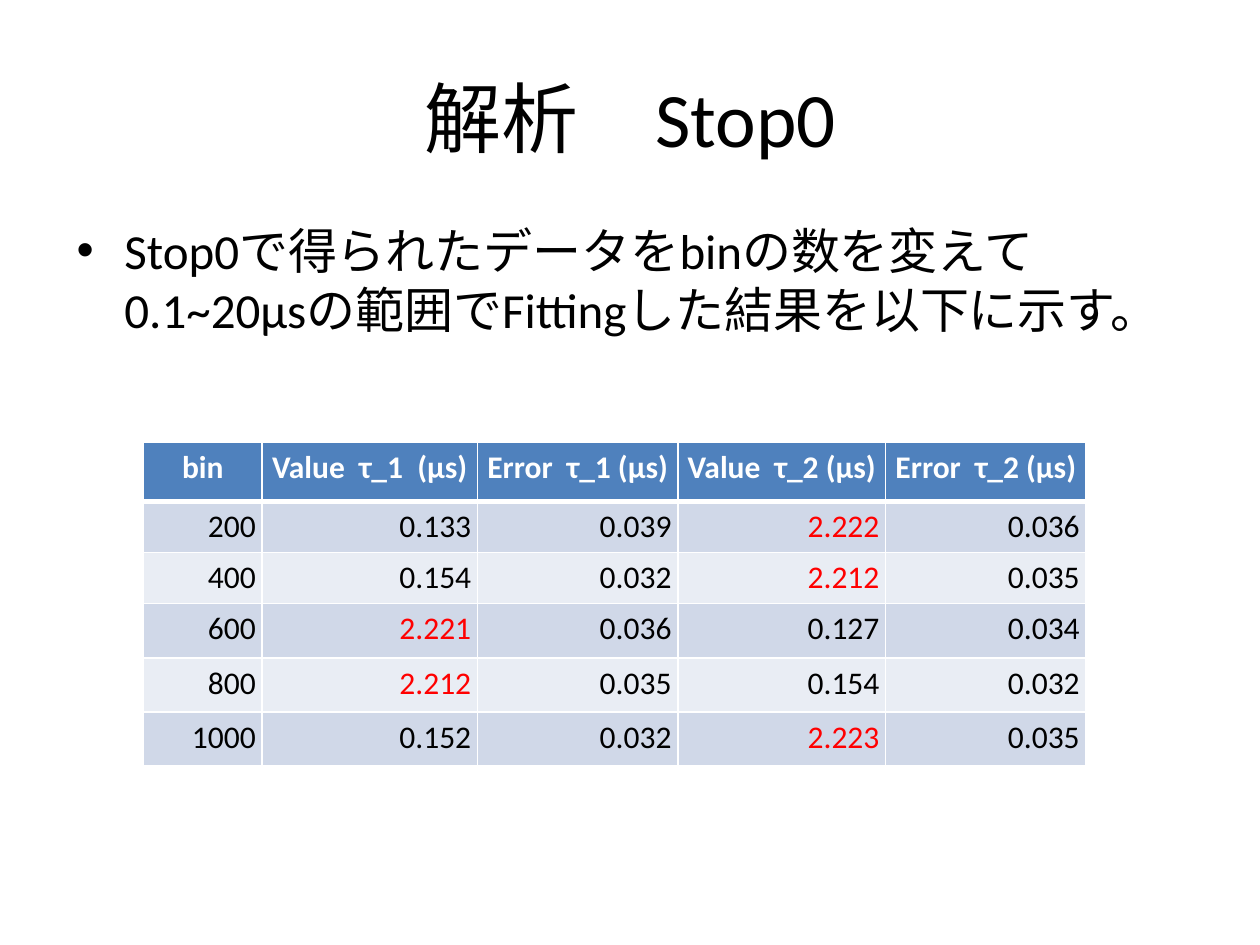
from lxml import etree
from pptx import Presentation
from pptx.dml.color import RGBColor
from pptx.enum.text import MSO_ANCHOR, PP_ALIGN
from pptx.oxml.ns import qn
from pptx.util import Inches, Pt

LEFT, CENTER, RIGHT = PP_ALIGN.LEFT, PP_ALIGN.CENTER, PP_ALIGN.RIGHT
TOP, MIDDLE = MSO_ANCHOR.TOP, MSO_ANCHOR.MIDDLE
TITLE_ONLY = 5
FONT = "Calibri"
BLACK, WHITE, RED = "000000", "FFFFFF", "FF0000"
HEADER_FILL = "4F81BD"
BAND_FILLS = ("D0D8E8", "E9EDF4")

COL_WIDTHS = (0.94, 1.71, 1.59, 1.65, 1.59)
ROW_HEIGHTS = (0.47, 0.4, 0.4, 0.43, 0.43, 0.43)
HEADERS = ("bin", "Value  τ_1  (μs)", "Error  τ_1 (μs)",
           "Value  τ_2 (μs)", "Error  τ_2 (μs)")
FITS = (
    (200, 0.133, 0.039, 2.222, 0.036),
    (400, 0.154, 0.032, 2.212, 0.035),
    (600, 2.221, 0.036, 0.127, 0.034),
    (800, 2.212, 0.035, 0.154, 0.032),
    (1000, 0.152, 0.032, 2.223, 0.035),
)


def rgb(color):
    return RGBColor.from_string(color)


def write(tf, text, size=18, color=BLACK, bold=False, align=LEFT):
    p = tf.paragraphs[0]
    p.alignment = align
    r = p.add_run()
    r.text = text
    r.font.name = FONT
    r.font.size = Pt(size)
    r.font.bold = bold
    r.font.color.rgb = rgb(color)
    return p


def add_title(s, text):
    sp = s.shapes.title
    sp.left, sp.top = Inches(0.5), Inches(0.3)
    sp.width, sp.height = Inches(9), Inches(1.25)
    sp.text_frame.vertical_anchor = MIDDLE
    write(sp.text_frame, text, size=44, align=CENTER)


def add_bullet(s, text):
    sp = s.shapes.add_textbox(Inches(0.51), Inches(1.7), Inches(9.06), Inches(5.04))
    sp.text_frame.word_wrap = True
    p = write(sp.text_frame, text, size=28)
    p.space_before = Pt(5.6)
    # Hanging indent and bullet character
    pPr = p._p.get_or_add_pPr()
    pPr.set("marL", str(Inches(0.38)))
    pPr.set("indent", str(Inches(-0.38)))
    etree.SubElement(pPr, qn("a:buFont")).set("typeface", "Arial")
    etree.SubElement(pPr, qn("a:buChar")).set("char", "•")


def set_borders(cell, top=1, bottom=1):
    tcPr = cell._tc.get_or_add_tcPr()
    widths = {"a:lnL": 1, "a:lnR": 1, "a:lnT": top, "a:lnB": bottom}
    for tag, width in widths.items():
        ln = etree.SubElement(tcPr, qn(tag), w=str(Pt(width)))
        fill = etree.SubElement(ln, qn("a:solidFill"))
        etree.SubElement(fill, qn("a:srgbClr"), val=WHITE)


def format_cell(cell, text, fill, top=1, bottom=1, **text_format):
    cell.margin_left = cell.margin_right = Inches(0.05)
    cell.margin_top = cell.margin_bottom = Inches(0.05)
    cell.vertical_anchor = TOP
    write(cell.text_frame, text, **text_format)
    # Borders must precede the fill in the cell properties
    set_borders(cell, top, bottom)
    cell.fill.solid()
    cell.fill.fore_color.rgb = rgb(fill)


def add_fit_table(s):
    table = s.shapes.add_table(
        len(ROW_HEIGHTS), len(COL_WIDTHS), Inches(1.14), Inches(3.51),
        Inches(sum(COL_WIDTHS)), Inches(sum(ROW_HEIGHTS))).table
    for col, width in zip(table.columns, COL_WIDTHS):
        col.width = Inches(width)
    for row, height in zip(table.rows, ROW_HEIGHTS):
        row.height = Inches(height)

    for j, text in enumerate(HEADERS):
        format_cell(table.cell(0, j), text, HEADER_FILL, bottom=3,
                    color=WHITE, bold=True, align=CENTER)
    for i, (bins, *values) in enumerate(FITS, start=1):
        fill = BAND_FILLS[(i - 1) % 2]
        top = 3 if i == 1 else 1
        format_cell(table.cell(i, 0), str(bins), fill, top=top, align=RIGHT)
        for j, value in enumerate(values, start=1):
            # The long lifetime, near 2.2 μs, stands out in red
            format_cell(table.cell(i, j), f"{value:.3f}", fill, top=top,
                        color=RED if value > 2 else BLACK, align=RIGHT)


def main():
    prs = Presentation()
    prs.slide_width, prs.slide_height = Inches(10), Inches(7.5)
    s = prs.slides.add_slide(prs.slide_layouts[TITLE_ONLY])
    add_title(s, "解析\u3000Stop0".replace("\u3000", "　"))
    add_fit_table(s)
    add_bullet(s, "Stop0で得られたデータをbinの数を変えて"
                  "0.1~20μsの範囲でFittingした結果を以下に示す。")
    prs.save("out.pptx")


if __name__ == "__main__":
    main()
